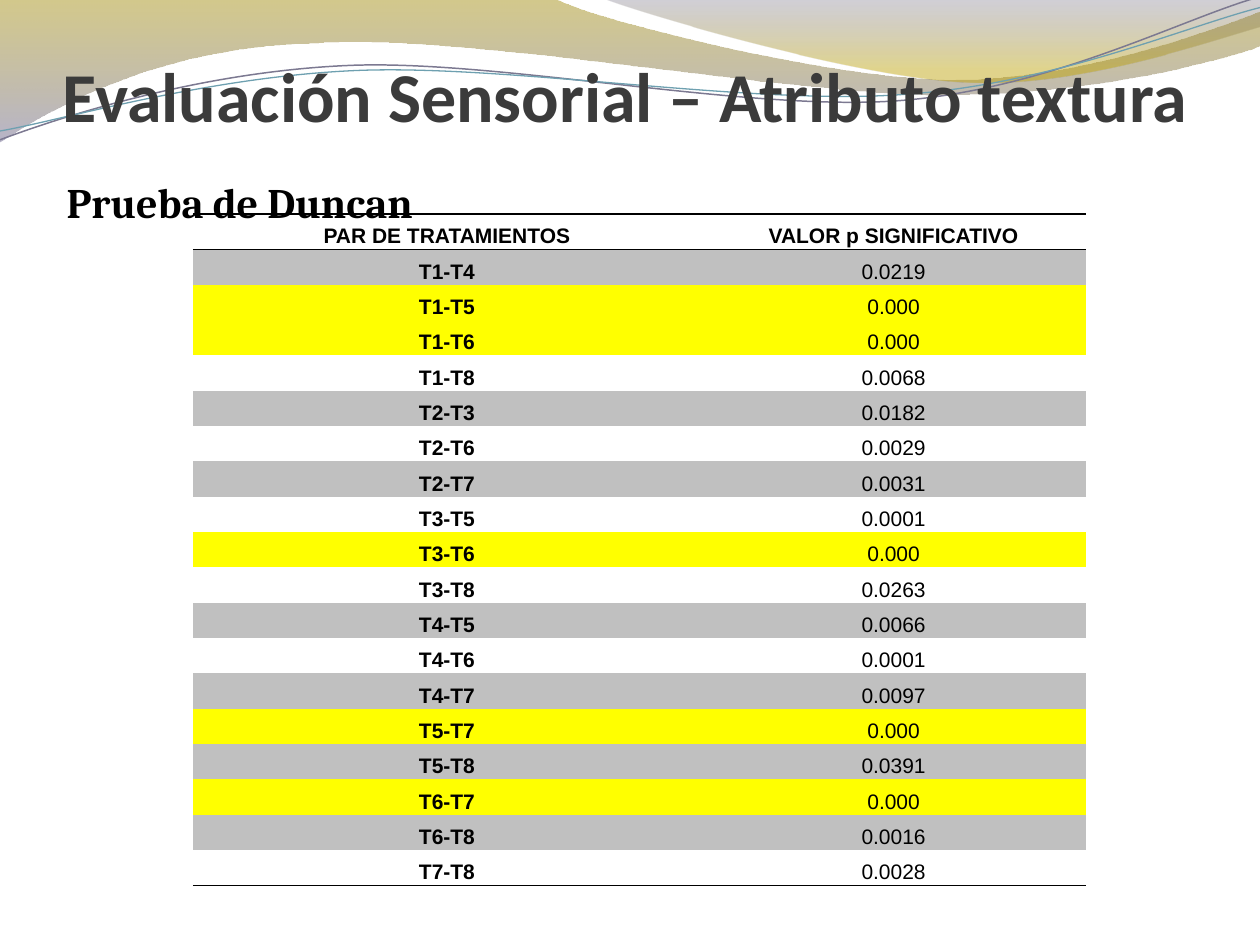
from collections import namedtuple
from itertools import chain

from lxml.etree import SubElement
from pptx import Presentation
from pptx.dml.color import RGBColor
from pptx.enum.text import MSO_ANCHOR, PP_ALIGN
from pptx.oxml import parse_xml
from pptx.oxml.ns import nsdecls, qn
from pptx.util import Inches, Pt

Box = namedtuple("Box", "left top width height")

PLAIN_TABLE_STYLE = "{2D5ABB26-0587-4C30-8999-92F81FD0307C}"
BLACK, GRAY, YELLOW = "000000", "C0C0C0", "FFFF00"

HEADINGS = ("PAR DE TRATAMIENTOS", "VALOR p SIGNIFICATIVO")
RESULTS = [
    ("T1-T4", "0.0219"), ("T1-T5", "0.000"), ("T1-T6", "0.000"),
    ("T1-T8", "0.0068"), ("T2-T3", "0.0182"), ("T2-T6", "0.0029"),
    ("T2-T7", "0.0031"), ("T3-T5", "0.0001"), ("T3-T6", "0.000"),
    ("T3-T8", "0.0263"), ("T4-T5", "0.0066"), ("T4-T6", "0.0001"),
    ("T4-T7", "0.0097"), ("T5-T7", "0.000"), ("T5-T8", "0.0391"),
    ("T6-T7", "0.000"), ("T6-T8", "0.0016"), ("T7-T8", "0.0028"),
]

WIDE_BAND = [
    [(0, 0)], [(4.4, -0.01)],
    [(4.76, 0.17), (6.64, 0.63), (7.58, 0.63)],
    [(8.53, 0.63), (9.58, 0.26), (10, 0.09)],
    [(10.01, 0.36)],
    [(9.83, 0.44), (8.7, 0.76), (7.46, 0.75)],
    [(6.22, 0.75), (3.82, 0.28), (2.57, 0.34)],
    [(1.29, 0.36), (0.46, 0.83), (-0.01, 1.13)],
]
CORNER_BAND = [
    [(4.79, -0.01)],
    [(5.09, 0.11), (6.82, 0.62), (7.69, 0.65)],
    [(8.56, 0.69), (9.61, 0.32), (10, 0.21)],
    [(10, 0)],
]
PURPLE_WAVE = [
    [(0, 1.11)],
    [(0.48, 0.93), (1.58, 0.57), (2.77, 0.52)],
    [(3.95, 0.47), (5.93, 0.89), (7.13, 0.8)],
    [(8.33, 0.71), (9.38, 0.15), (9.98, -0.02)],
]
BLUE_WAVE = [
    [(0, 1.04)],
    [(0.47, 0.96), (1.64, 0.61), (2.83, 0.56)],
    [(4.03, 0.51), (5.97, 0.84), (7.17, 0.75)],
    [(8.36, 0.67), (9.41, 0.21), (10, 0.06)],
]


def color(value):
    """Turn a hex string into a colour."""
    return RGBColor.from_string(value)


def bend(shape, segments):
    """Turn each run of three straight steps into one cubic curve."""
    steps = iter(list(shape._element.iter(qn("a:lnTo"))))
    for segment in segments[1:]:
        first, *others = [next(steps) for _ in segment]
        if others:
            curve = parse_xml(f'<a:cubicBezTo {nsdecls("a")}/>')
            first.addprevious(curve)
            for step in (first, *others):
                curve.append(step[0])
                step.getparent().remove(step)


def add_outline(page, box, segments, close):
    """Draw an outline whose points are measured in inches from the box."""
    points = [(box.left + Inches(x), box.top + Inches(y))
              for x, y in chain.from_iterable(segments)]
    builder = page.shapes.build_freeform(*points[0])
    builder.add_line_segments(points[1:], close=close)
    shape = builder.convert_to_shape()
    shape.shadow.inherit = False
    bend(shape, segments)
    return shape


def add_band(page, box, segments, stops):
    """Draw a band with a translucent gradient running downwards."""
    shape = add_outline(page, box, segments, True)
    shape.line.fill.background()
    shape.fill.gradient()
    shape.fill.gradient_angle = 270
    for stop, (position, value, _) in zip(shape.fill.gradient_stops, stops):
        stop.position = position
        stop.color.rgb = color(value)
    for tint, (_, _, opacity) in zip(shape._element.spPr.iter(qn("a:srgbClr")), stops):
        SubElement(tint, qn("a:alpha")).set("val", str(opacity * 1000))


def add_wave(page, box, segments, value, width):
    """Draw one thin wavy line."""
    shape = add_outline(page, box, segments, False)
    shape.fill.background()
    shape.line.color.rgb = color(value)
    shape.line.width = Pt(width)


def add_header(page, box):
    """Place the bands and waves along the top."""
    add_band(page, box, WIDE_BAND, [(0, "9E8700", 45), (1, "7B769C", 55)])
    add_band(page, box, CORNER_BAND, [(0, "66627C", 30), (0.8, "BDA100", 45)])
    add_wave(page, box, PURPLE_WAVE, "7C7991", 0.85)
    add_wave(page, box, BLUE_WAVE, "6EA0B0", 0.75)


def write(para, text, size, font, value, bold=True):
    """Add one run to a paragraph."""
    span = para.add_run()
    span.text = text
    span.font.size = Pt(size)
    span.font.name = font
    span.font.bold = bold
    span.font.color.rgb = color(value)


def add_text_box(page, box, anchor):
    """Place a wrapping text box and return its frame."""
    frame = page.shapes.add_textbox(*box).text_frame
    frame.word_wrap = True
    frame.vertical_anchor = anchor
    return frame


def add_title(page, box):
    """Place the slide title."""
    frame = add_text_box(page, box, MSO_ANCHOR.BOTTOM)
    frame.margin_left = frame.margin_right = frame.margin_bottom = 0
    write(frame.paragraphs[0], "Evaluación Sensorial – Atributo textura", 40, "Calibri", "3B3B3B")


def add_subtitle(page, box):
    """Place the name of the test."""
    frame = add_text_box(page, box, MSO_ANCHOR.TOP)
    write(frame.paragraphs[0], "Prueba de Duncan", 24, "Cambria", BLACK)


def add_border(cell, side):
    """Rule the top (T) or bottom (B) side of a cell."""
    cell._tc.get_or_add_tcPr().insert(0, parse_xml(
        f'<a:ln{side} {nsdecls("a")} w="{Pt(1)}"><a:solidFill>'
        f'<a:srgbClr val="{BLACK}"/></a:solidFill></a:ln{side}>'))


def fill_cell(cell, text, bold, background):
    """Write and colour one table cell."""
    cell.margin_left = cell.margin_right = Inches(0.07)
    cell.margin_top = cell.margin_bottom = 0
    cell.vertical_anchor = MSO_ANCHOR.MIDDLE
    para = cell.text_frame.paragraphs[0]
    para.alignment = PP_ALIGN.CENTER
    para.line_spacing = 1.4
    para._p.get_or_add_pPr().set("marL", str(Inches(0.49)))
    write(para, text, 12, "Arial", BLACK, bold)
    if background:
        cell.fill.solid()
        cell.fill.fore_color.rgb = color(background)
    else:
        cell.fill.background()


def add_results(page, box):
    """Place the table, with the zero values in yellow and other odd rows in gray."""
    rows = [HEADINGS, *RESULTS]
    table = page.shapes.add_table(len(rows), len(HEADINGS), *box).table
    table.first_row = table.horz_banding = False
    table._tbl.tblPr.find(qn("a:tableStyleId")).text = PLAIN_TABLE_STYLE
    for index, values in enumerate(rows):
        table.rows[index].height = box.height // len(rows)
        background = YELLOW if values[1] == "0.000" else GRAY if index % 2 else None
        for column, text in enumerate(values):
            cell = table.cell(index, column)
            fill_cell(cell, text, index == 0 or column == 0, background)
            if index in (0, len(rows) - 1):
                add_border(cell, "B")
            if index == 0:
                add_border(cell, "T")


def main():
    """Build and save the slide."""
    deck = Presentation()
    deck.slide_width, deck.slide_height = Inches(10), Inches(7.5)
    page = deck.slides.add_slide(deck.slide_layouts[6])
    add_header(page, Box(0, 0, Inches(10), Inches(1.14)))
    add_title(page, Box(Inches(0.5), Inches(-0.17), Inches(9), Inches(1.25)))
    add_results(page, Box(Inches(1.53), Inches(1.7), Inches(7.09), Inches(5.33)))
    add_subtitle(page, Box(Inches(0.43), Inches(1.35), Inches(3.7), Inches(0.5)))
    deck.save("out.pptx")


if __name__ == "__main__":
    main()
